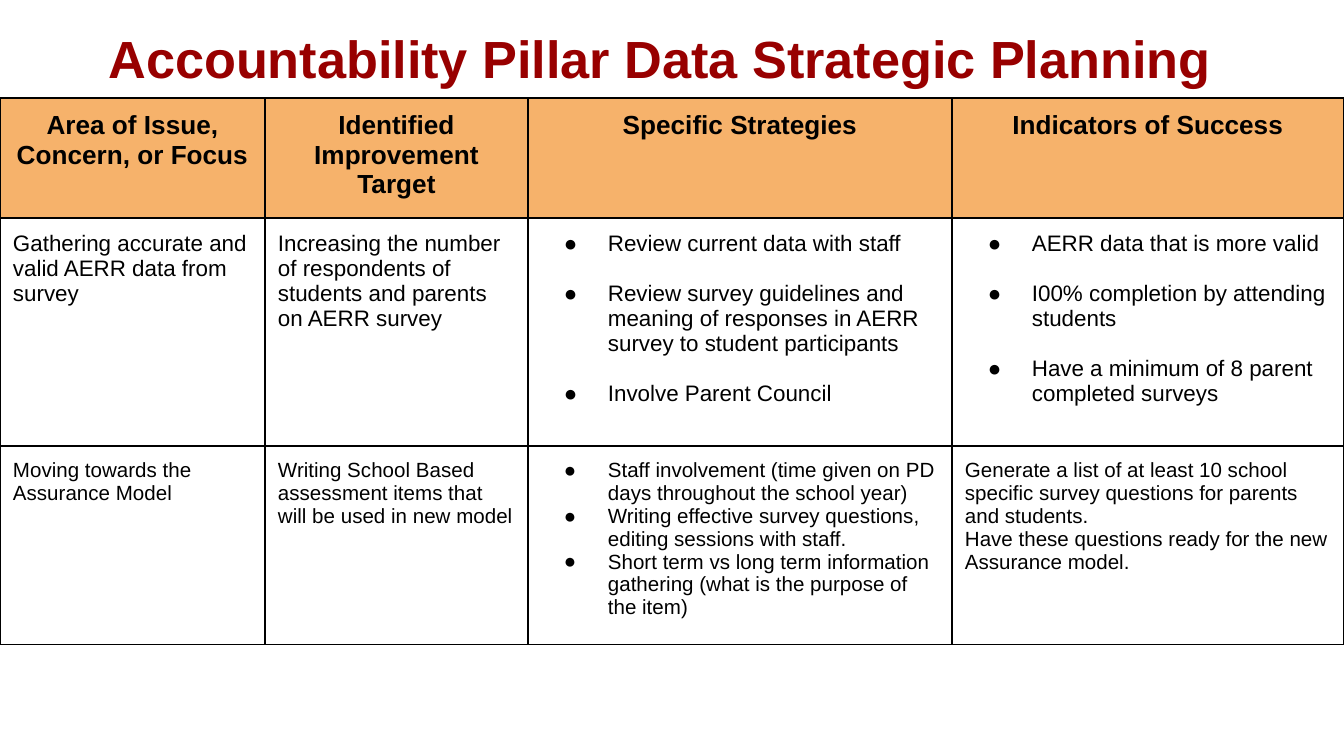
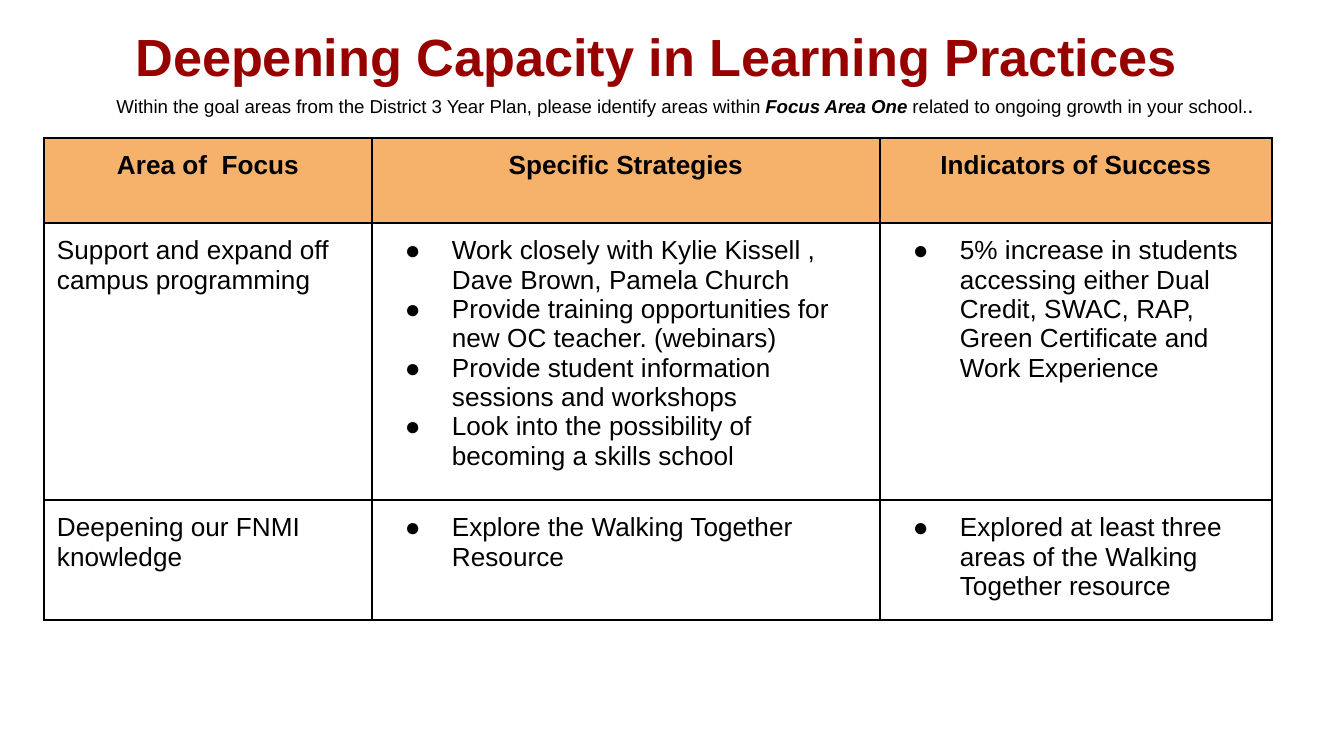
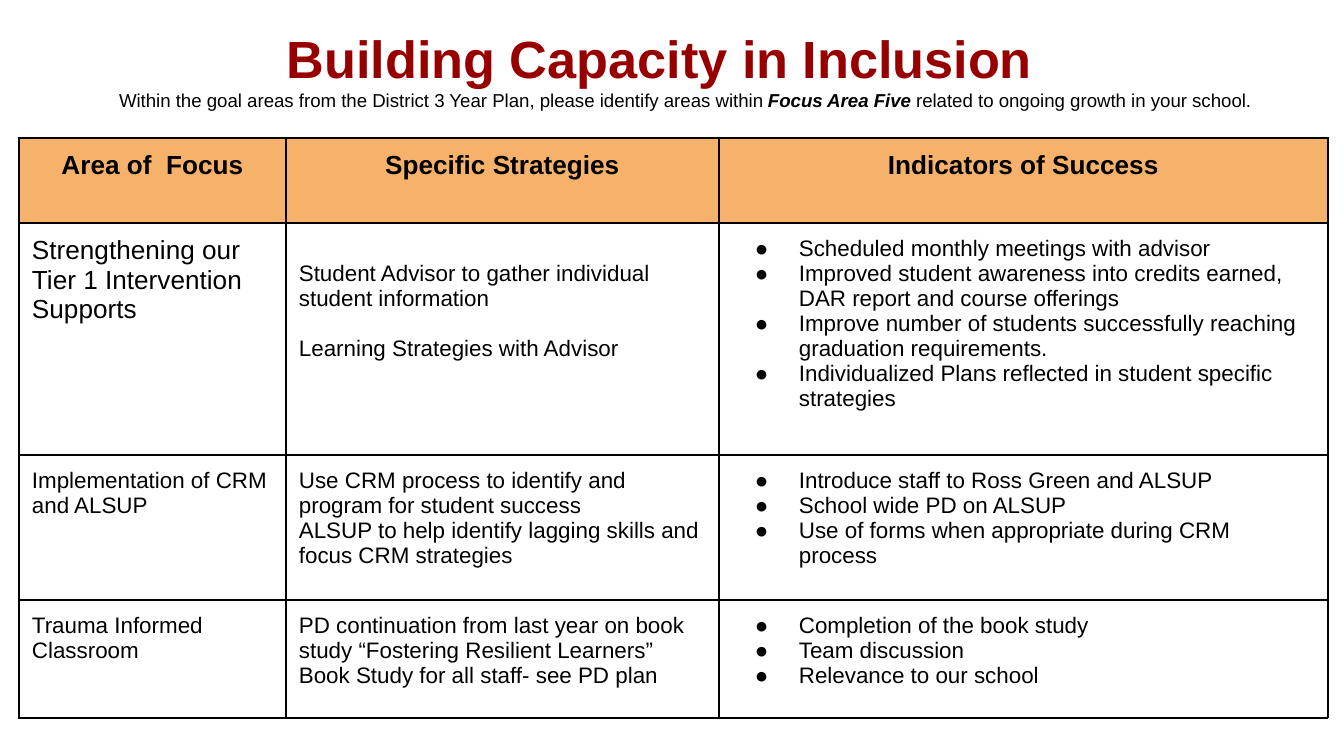
import pptx
import pptx.dml.color
import pptx.enum.text
import pptx.oxml
import pptx.oxml.ns
import pptx.util

COLORS = {"title": "980000", "header": "F6B26B", "ink": "000000", "page": "FFFFFF"}
FONT = "Arial"
PX = 914400 / 134.4
INSET = 13
BULLET_INDENT = 67
BLANK_LINE = 13.4
CENTER = pptx.enum.text.PP_ALIGN.CENTER


def plain(*lines, size=12, gap=0, lead=0):
    return {"lines": lines, "size": size, "gap": gap, "lead": lead, "hang": 0}


def bullets(*lines, size=12, gap=0, hang=44):
    return {"lines": lines, "size": size, "gap": gap, "lead": 0, "hang": hang}


def wide_bullets(*lines):
    return bullets(*lines, size=14, hang=47)


GOAL_INTRO = "Within the goal areas from the District 3 Year Plan, please identify areas within "
SUBTITLE_BOX = (43, 78, 1284, 44)

PAGES = [
    {
        "title": "Accountability Pillar Data Strategic Planning",
        "title_box": (33, 13, 1253, 85),
        "subtitle": [],
        "table_at": (0, 98),
        "columns": [265, 263, 424, 392],
        "rows": [56, 228, 145],
        "header": ["Area of Issue, Concern, or Focus", "Identified Improvement Target",
                   "Specific Strategies", "Indicators of Success"],
        "body": [
            [
                plain("Gathering accurate and valid AERR data from survey"),
                plain("Increasing the number of respondents of students and parents on AERR survey"),
                bullets(
                    "Review current data with staff",
                    "Review survey guidelines and meaning of responses in AERR survey to student participants",
                    "Involve Parent Council",
                    gap=BLANK_LINE),
                bullets(
                    "AERR data that is more valid",
                    "I00% completion by attending students",
                    "Have a minimum of 8 parent completed surveys",
                    gap=BLANK_LINE),
            ],
            [
                plain("Moving towards the Assurance Model", size=11),
                plain("Writing School Based assessment items that will be used in new model", size=11),
                bullets(
                    "Staff involvement (time given on PD days throughout the school year)",
                    "Writing effective survey questions, editing sessions with staff.",
                    "Short term vs long term information gathering (what is the purpose of the item)",
                    size=11),
                plain(
                    "Generate a list of at least 10 school specific survey questions for parents and students.",
                    "Have these questions ready for the new Assurance model.",
                    size=11),
            ],
        ],
    },
    {
        "title": "Deepening Capacity in Learning Practices",
        "title_box": (53, 11, 1206, 44),
        "subtitle": [(GOAL_INTRO, 10, False), ("Focus Area One", 10, True),
                     (" related to ongoing growth in your school.", 10, False), (".", 12, False)],
        "table_at": (44, 138),
        "columns": [328, 508, 392],
        "rows": [85, 75, 75],
        "header": ["Area of  Focus", "Specific Strategies", "Indicators of Success"],
        "body": [
            [
                plain("Support and expand off campus programming", size=14),
                wide_bullets(
                    "Work closely with Kylie Kissell , Dave Brown, Pamela Church",
                    "Provide training opportunities for new OC teacher. (webinars)",
                    "Provide student information sessions and workshops",
                    "Look into the possibility of becoming a skills school"),
                wide_bullets("5% increase in students accessing either Dual Credit, SWAC, RAP, "
                             "Green Certificate and Work Experience"),
            ],
            [
                plain("Deepening our FNMI knowledge", size=14),
                wide_bullets("Explore the Walking Together Resource"),
                wide_bullets("Explored at least three areas of the Walking Together resource"),
            ],
        ],
    },
    {
        "title": "Building Capacity in Inclusion",
        "title_box": (33, 13, 1253, 85),
        "subtitle": [(GOAL_INTRO, 10, False), ("Focus Area Five ", 10, True),
                     ("related to ongoing growth in your school.", 10, False)],
        "table_at": (19, 138),
        "columns": [267, 433, 609],
        "rows": [85, 232, 145, 118],
        "header": ["Area of  Focus", "Specific Strategies", "Indicators of Success"],
        "body": [
            [
                plain("Strengthening our Tier 1 Intervention Supports", size=14),
                plain("Student Advisor to gather individual student information",
                      "Learning Strategies with Advisor", gap=BLANK_LINE, lead=25),
                bullets(
                    "Scheduled monthly meetings with advisor",
                    "Improved student awareness into credits earned, DAR report and course offerings",
                    "Improve number of students successfully reaching graduation requirements.",
                    "Individualized Plans reflected in student specific strategies"),
            ],
            [
                plain("Implementation of CRM and ALSUP"),
                plain("Use CRM process to identify and program for student success",
                      "ALSUP to help identify lagging skills and focus CRM strategies"),
                bullets("Introduce staff to Ross Green and ALSUP", "School wide PD on ALSUP",
                        "Use of forms when appropriate during CRM process"),
            ],
            [
                plain("Trauma Informed Classroom"),
                plain("PD continuation from last year on book study “Fostering Resilient Learners”",
                      "Book Study for all staff- see PD plan"),
                bullets("Completion of the book study", "Team discussion", "Relevance to our school"),
            ],
        ],
    },
]


def emu(length):
    return pptx.util.Emu(round(length * PX))


def rgb(name):
    return pptx.dml.color.RGBColor.from_string(COLORS[name])


def make_xml(markup):
    namespace = pptx.oxml.ns.nsdecls("a")
    return pptx.oxml.parse_xml(markup.replace(">", f" {namespace}>", 1))


def style_span(span, size, color="ink", bold=False, italic=False):
    span.font.name = FONT
    span.font.size = pptx.util.Pt(size)
    span.font.color.rgb = rgb(color)
    span.font.bold = bold
    span.font.italic = italic


def set_insets(area, lead=0):
    area.margin_left = area.margin_right = area.margin_bottom = emu(INSET)
    area.margin_top = emu(INSET + lead)


def add_text(page, box_at, spans, color):
    frame = page.shapes.add_textbox(*map(emu, box_at)).text_frame
    frame.word_wrap = True
    set_insets(frame)
    para = frame.paragraphs[0]
    para.alignment = CENTER
    for text, size, bold, italic in spans:
        span = para.add_run()
        span.text = text
        style_span(span, size, color, bold, italic)


def add_bullet(para, hang):
    properties = para._p.get_or_add_pPr()
    properties.set("marL", str(emu(BULLET_INDENT)))
    properties.set("indent", str(-emu(hang)))
    for markup in (f'<a:buClr><a:srgbClr val="{COLORS["ink"]}"/></a:buClr>',
                   f'<a:buFont typeface="{FONT}"></a:buFont>',
                   '<a:buChar char="●"></a:buChar>'):
        properties.append(make_xml(markup))


def add_borders(cell):
    properties = cell._tc.get_or_add_tcPr()
    for index, side in enumerate(("lnL", "lnR", "lnT", "lnB")):
        properties.insert(index, make_xml(
            f'<a:{side} w="{pptx.util.Pt(0.75)}"><a:solidFill>'
            f'<a:srgbClr val="{COLORS["ink"]}"/></a:solidFill></a:{side}>'))


def fill_cell(cell, content, is_header):
    set_insets(cell, content["lead"])
    cell.text_frame.text = "\n".join(content["lines"])
    for index, para in enumerate(cell.text_frame.paragraphs):
        if is_header:
            para.alignment = CENTER
        if index and content["gap"]:
            para.space_before = pptx.util.Pt(content["gap"])
        if content["hang"]:
            add_bullet(para, content["hang"])
        for span in para.runs:
            style_span(span, content["size"], bold=is_header)
    if is_header:
        cell.fill.solid()
        cell.fill.fore_color.rgb = rgb("header")
    else:
        cell.fill.background()
    add_borders(cell)


def add_plan_table(page, plan):
    columns, rows = plan["columns"], plan["rows"]
    table_at = (*plan["table_at"], sum(columns), sum(rows))
    table = page.shapes.add_table(len(rows), len(columns), *map(emu, table_at)).table
    table.first_row = table.horz_banding = False
    for column, width in zip(table.columns, columns):
        column.width = emu(width)
    for row, height in zip(table.rows, rows):
        row.height = emu(height)
    header = [plain(label, size=14) for label in plan["header"]]
    for row_index, contents in enumerate([header] + plan["body"]):
        for column_index, content in enumerate(contents):
            fill_cell(table.cell(row_index, column_index), content, row_index == 0)


def add_page(deck, plan):
    page = deck.slides.add_slide(deck.slide_layouts[6])
    page.background.fill.solid()
    page.background.fill.fore_color.rgb = rgb("page")
    add_text(page, plan["title_box"], [(plan["title"], 28, True, False)], "title")
    add_plan_table(page, plan)
    if plan["subtitle"]:
        spans = [(text, size, strong, strong) for text, size, strong in plan["subtitle"]]
        add_text(page, SUBTITLE_BOX, spans, "ink")


def main():
    deck = pptx.Presentation()
    deck.slide_width, deck.slide_height = emu(1344), emu(756)
    for plan in PAGES:
        add_page(deck, plan)
    deck.save("out.pptx")


if __name__ == "__main__":
    main()
